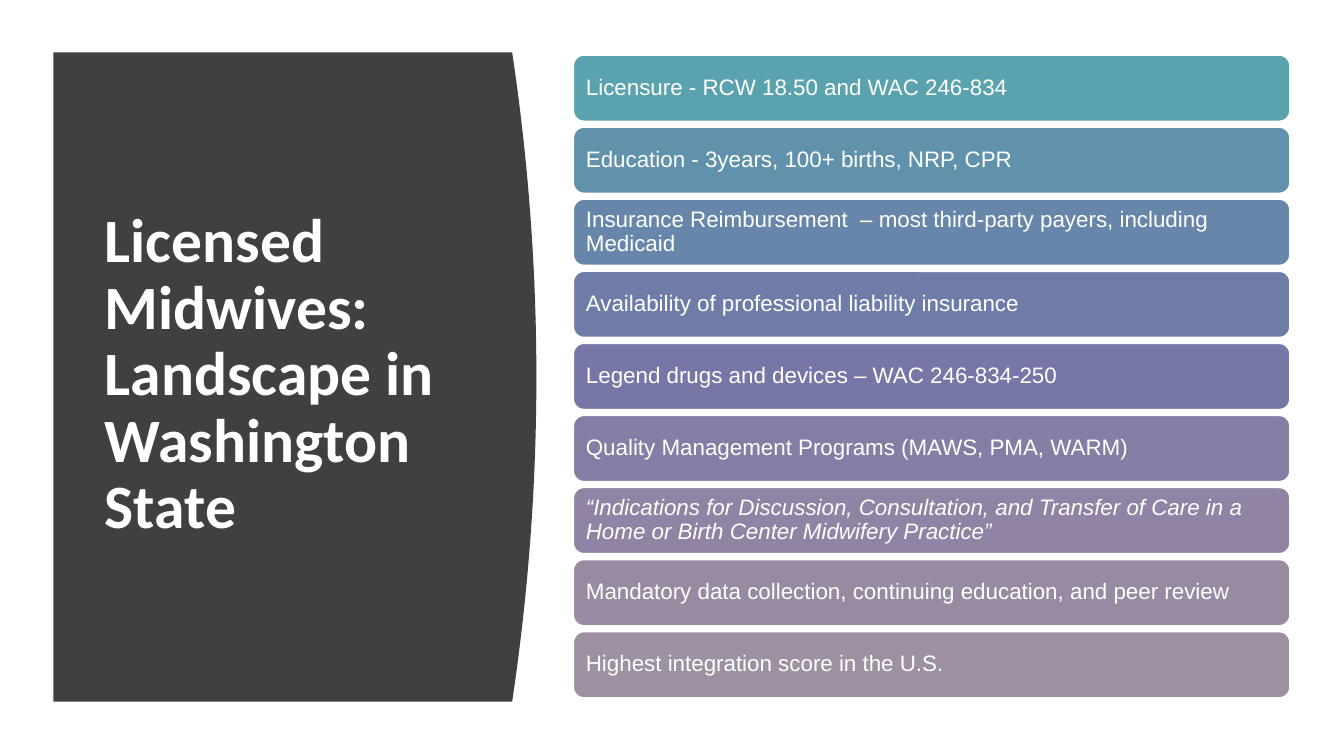
"""Build the slide on licensed midwives in Washington State."""
from dataclasses import dataclass

from pptx import Presentation
from pptx.dml.color import RGBColor
from pptx.enum.shapes import MSO_SHAPE
from pptx.enum.text import MSO_ANCHOR, MSO_AUTO_SIZE, PP_ALIGN
from pptx.util import Inches, Pt


@dataclass(frozen=True)
class Theme:
    panel: str = "404040"
    light: str = "FFFFFF"
    head: str = "Calibri"
    body: str = "Arial"
    head_size: int = 44
    body_size: int = 16
    bars: tuple = ("5AA2AE", "6192AC", "6885AA", "6F7CA8", "7677A6",
                   "847DA4", "9083A3", "988AA1", "9D90A0")


class Deck:
    def __init__(self, theme):
        self.theme = theme
        self.prs = Presentation()
        self.prs.slide_width = Inches(13.33)
        self.prs.slide_height = Inches(7.5)
        self.slide = self.prs.slides.add_slide(self.prs.slide_layouts[5])

    def fill(self, shape, color):
        shape.shadow.inherit = False
        shape.fill.solid()
        shape.fill.fore_color.rgb = RGBColor.from_string(color)

    def label(self, shape, text, face, size, bold=False, italic=False):
        frame = shape.text_frame
        frame.text = text
        frame.word_wrap = True
        frame.auto_size = MSO_AUTO_SIZE.NONE
        frame.vertical_anchor = MSO_ANCHOR.MIDDLE
        frame.margin_left = frame.margin_right = Inches(0.1)
        frame.margin_top = frame.margin_bottom = Inches(0.05)
        para = frame.paragraphs[0]
        para.alignment = PP_ALIGN.LEFT
        para.line_spacing = 0.9
        font = para.font
        font.name, font.size = face, Pt(size)
        font.bold, font.italic = bold, italic
        font.color.rgb = RGBColor.from_string(self.theme.light)

    def title(self, text, left, top, width, height):
        shape = self.slide.shapes.title
        shape.left, shape.top = Inches(left), Inches(top)
        shape.width, shape.height = Inches(width), Inches(height)
        self.label(shape, text, self.theme.head, self.theme.head_size, bold=True)

    def panel(self, left, top, right, height, bulge, steps=40):
        edge = []
        for step in range(steps + 1):
            part = step / steps
            bow = bulge * (1 - (2 * part - 1) ** 2)
            edge.append((Inches(right + bow), Inches(top + height * part)))
        form = self.slide.shapes.build_freeform(Inches(left), Inches(top))
        form.add_line_segments(edge + [(Inches(left), Inches(top + height))])
        shape = form.convert_to_shape()
        self.fill(shape, self.theme.panel)
        shape.line.fill.background()
        self.slide.shapes.title.element.addprevious(shape.element)

    def bar(self, text, color, left, top, width, height, italic=False):
        shape = self.slide.shapes.add_shape(
            MSO_SHAPE.ROUNDED_RECTANGLE, Inches(left), Inches(top),
            Inches(width), Inches(height))
        self.fill(shape, color)
        shape.line.color.rgb = RGBColor.from_string(self.theme.light)
        shape.line.width = Pt(2)
        self.label(shape, text, self.theme.body, self.theme.body_size, italic=italic)

    def save(self):
        self.prs.save("out.pptx")


TOPICS = (
    "Licensure - RCW 18.50 and WAC 246-834",
    "Education - 3years, 100+ births, NRP, CPR",
    "Insurance Reimbursement  – most third-party payers, including Medicaid",
    "Availability of professional liability insurance",
    "Legend drugs and devices – WAC 246-834-250",
    "Quality Management Programs (MAWS, PMA, WARM)",
    "“Indications for Discussion, Consultation, and Transfer of Care in a "
    "Home or Birth Center Midwifery Practice”",
    "Mandatory data collection, continuing education, and peer review",
    "Highest integration score in the U.S.",
)


def main():
    deck = Deck(Theme())
    deck.panel(0.53, 0.52, 5.08, 6.44, bulge=0.24)
    deck.title("Licensed Midwives: \vLandscape in Washington State",
               0.94, 1.11, 3.74, 5.24)
    first, last = 0.54, 6.26
    pitch = (last - first) / (len(TOPICS) - 1)
    for row, (text, color) in enumerate(zip(TOPICS, deck.theme.bars)):
        deck.bar(text, color, 5.68, first + row * pitch, 7.12, 0.67,
                 italic=text.startswith("“"))
    deck.save()


if __name__ == "__main__":
    main()
